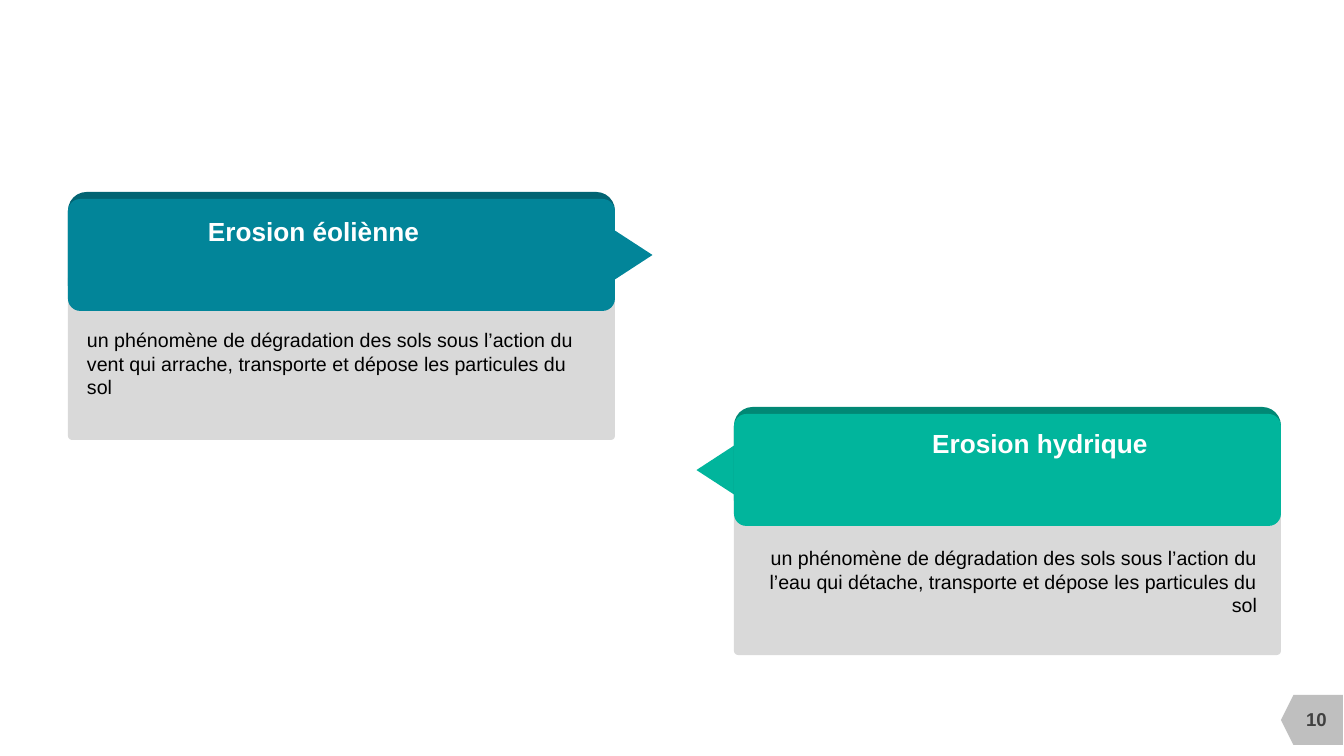
from pptx import Presentation
from pptx.dml.color import RGBColor
from pptx.enum.shapes import MSO_SHAPE as SHAPE
from pptx.enum.text import MSO_ANCHOR as ANCHOR, PP_ALIGN as ALIGN
from pptx.util import Emu, Pt

TEAL, DARK_TEAL = RGBColor(0x02, 0x85, 0x99), RGBColor(0x02, 0x64, 0x73)
GREEN, DARK_GREEN = RGBColor(0x01, 0xB5, 0x9C), RGBColor(0x01, 0x88, 0x75)
PANEL, TAB = RGBColor(0xD9, 0xD9, 0xD9), RGBColor(0xBF, 0xBF, 0xBF)
WHITE, BLACK = RGBColor(0xFF, 0xFF, 0xFF), RGBColor(0, 0, 0)
GREY = RGBColor(0x40, 0x40, 0x40)

CARD_W, CARD_H = 547, 248
HEADER_H, PANEL_H, BAND = 112, 166, 7
POINTER_W, POINTER_H = 69, 53


def px(n):
    """Turn pixels into EMU."""
    return Emu(round(n * 914400 / 100.8))


def add_block(s, kind, x, y, w, h, fill, adj=None, rotation=0):
    """Add a flat, borderless preset shape."""
    sp = s.shapes.add_shape(kind, px(x), px(y), px(w), px(h))
    sp.shadow.inherit = False
    sp.fill.solid()
    sp.fill.fore_color.rgb = fill
    sp.line.fill.background()
    sp.rotation = rotation
    if adj is not None:
        sp.adjustments[0] = adj


def add_text(s, x, y, w, h, text, size, color, align, bold=False, wrap=True, anchor=ANCHOR.MIDDLE):
    """Add a text box without margins."""
    tf = s.shapes.add_textbox(px(x), px(y), px(w), px(h)).text_frame
    tf.margin_left = tf.margin_right = tf.margin_top = tf.margin_bottom = 0
    tf.word_wrap = wrap
    tf.vertical_anchor = anchor
    p = tf.paragraphs[0]
    p.text = text
    p.alignment = align
    p.font.name = "Arial"
    p.font.size = Pt(size)
    p.font.bold = bold
    p.font.color.rgb = color


def add_card(s, x, y, title, body, color, dark, align, title_box, body_at):
    """Add a definition card whose pointer faces the middle of the slide."""
    points_right = align == ALIGN.LEFT
    tip_x = x + CARD_W + 11 if points_right else x - 11
    add_block(s, SHAPE.ROUNDED_RECTANGLE, x, y + CARD_H - PANEL_H, CARD_W, PANEL_H, PANEL, 0.025)
    add_block(s, SHAPE.ISOSCELES_TRIANGLE, tip_x - POINTER_W / 2, y + 63 - POINTER_H / 2,
              POINTER_W, POINTER_H, color, rotation=90 if points_right else 270)
    add_block(s, SHAPE.ROUNDED_RECTANGLE, x, y, CARD_W, HEADER_H, dark)
    add_block(s, SHAPE.ROUNDED_RECTANGLE, x, y + BAND, CARD_W, HEADER_H, color, 0.11)
    dx, dy, w = title_box
    add_text(s, x + dx, y + dy, w, 31, title, 18.7, WHITE, align, bold=True, wrap=False)
    dx, dy = body_at
    add_text(s, x + dx, y + dy, 506, 72, body, 14, BLACK, align, anchor=ANCHOR.TOP)


def add_page_number(s, x, y, w, h, number):
    """Add the page number on its grey tab."""
    add_block(s, SHAPE.FLOWCHART_OFFPAGE_CONNECTOR, x + (w - h) / 2, y + (h - w) / 2,
              h, w, TAB, rotation=90)
    add_text(s, x + 2, y + 4, 67, 41, number, 13.3, GREY, ALIGN.CENTER, bold=True)


def main():
    """Build the slide on the two kinds of erosion."""
    prs = Presentation()
    prs.slide_width, prs.slide_height = px(1344), px(756)
    s = prs.slides.add_slide(prs.slide_layouts[6])
    add_page_number(s, 1281, 695, 62, 50, "10")
    add_card(s, 68, 192, "Erosion éoliènne",
             "un phénomène de dégradation des sols sous l’action du vent qui arrache, "
             "transporte et dépose les particules du sol",
             TEAL, DARK_TEAL, ALIGN.LEFT, (140, 24, 220), (19, 136))
    add_card(s, 734, 407, "Erosion hydrique ",
             "un phénomène de dégradation des sols sous l’action du l’eau qui détache, "
             "transporte et dépose les particules du sol",
             GREEN, DARK_GREEN, ALIGN.RIGHT, (197, 21, 224), (17, 139))
    prs.save("out.pptx")


if __name__ == "__main__":
    main()
